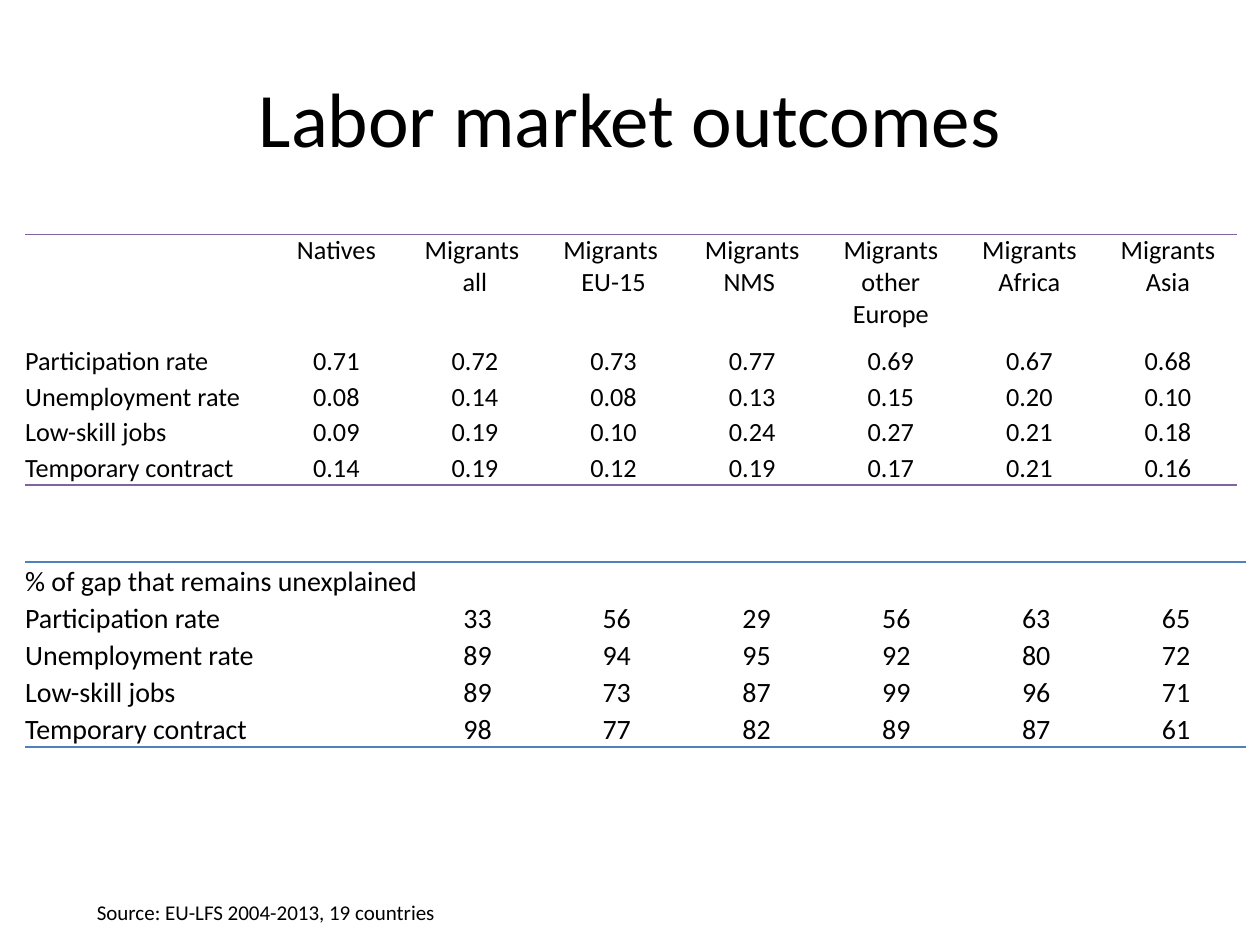
from dataclasses import dataclass

from lxml.etree import SubElement
from pptx import Presentation
from pptx.dml.color import RGBColor
from pptx.enum.text import MSO_ANCHOR as Anchor, PP_ALIGN as Align
from pptx.oxml import parse_xml
from pptx.oxml.ns import nsdecls, qn
from pptx.util import Inches, Pt

FONT = "Calibri"
COLORS = {"text": "000000", "purple": "8064A2", "blue": "4F81BD"}
NO_STYLE_NO_GRID = "{2D5ABB26-0587-4C30-8999-92F81FD0307C}"


@dataclass
class TextBox:
    text: str
    box: tuple[float, float, float, float]
    size: float
    align: Align = Align.LEFT
    anchor: Anchor = Anchor.TOP
    space_before: float = 0


@dataclass
class DataTable:
    top: float
    columns: list[float]
    rows: list[float]
    size: float
    rule_color: str
    cells: list[list[str]]
    top_anchored_header: bool = False
    heading_span: int = 1


TITLE = TextBox("Labor market outcomes", (0.5, 0.3, 9, 1.25), 44,
                Align.CENTER, Anchor.MIDDLE)
SOURCE = TextBox("Source: EU-LFS 2004-2013, 19 countries",
                 (0.67, 7.09, 6.93, 0.82), 12, space_before=2.4)

OUTCOMES = DataTable(
    top=1.86,
    columns=[1.92] + [1.1] * 7,
    rows=[0.85] + [1.14 / 4] * 4,
    size=15,
    rule_color="purple",
    top_anchored_header=True,
    cells=[
        ["", "Natives", "Migrants \vall", "Migrants \vEU-15", "Migrants NMS ",
         "Migrants other Europe", "Migrants Africa", "Migrants Asia"],
        ["Participation rate", "0.71", "0.72", "0.73", "0.77", "0.69", "0.67", "0.68"],
        ["Unemployment rate", "0.08", "0.14", "0.08", "0.13", "0.15", "0.20", "0.10"],
        ["Low-skill jobs", "0.09", "0.19", "0.10", "0.24", "0.27", "0.21", "0.18"],
        ["Temporary contract", "0.14", "0.19", "0.12", "0.19", "0.17", "0.21", "0.16"],
    ],
)
UNEXPLAINED_GAP = DataTable(
    top=4.46,
    columns=[2.25, 0.79, 1.1] + [1.11] * 5,
    rows=[1.47 / 5] * 5,
    size=16,
    rule_color="blue",
    heading_span=3,
    cells=[
        ["% of gap that remains unexplained"] + [""] * 7,
        ["Participation rate", "", "33", "56", "29", "56", "63", "65"],
        ["Unemployment rate", "", "89", "94", "95", "92", "80", "72"],
        ["Low-skill jobs", "", "89", "73", "87", "99", "96", "71"],
        ["Temporary contract", "", "98", "77", "82", "89", "87", "61"],
    ],
)


def format_paragraph(p, size: float, align: Align) -> None:
    p.alignment = align
    for r in p.runs:
        r.font.name = FONT
        r.font.size = Pt(size)
        r.font.color.rgb = RGBColor.from_string(COLORS["text"])


def add_text(slide, item: TextBox) -> None:
    sp = slide.shapes.add_textbox(*map(Inches, item.box))
    tf = sp.text_frame
    tf.word_wrap = True
    tf.vertical_anchor = item.anchor
    tf.text = item.text
    p = tf.paragraphs[0]
    p.space_before = Pt(item.space_before)
    format_paragraph(p, item.size, item.align)


def add_rule(cell, side: str, color: str) -> None:
    """Draw a 1 pt border on one side of the cell: lnT or lnB."""
    line = parse_xml(
        f'<a:{side} {nsdecls("a")} w="{Pt(1)}"><a:solidFill>'
        f'<a:srgbClr val="{color}"/></a:solidFill></a:{side}>')
    cell._tc.get_or_add_tcPr().insert(0, line)


def fill_cell(cell, text: str, size: float, align: Align, anchor: Anchor) -> None:
    cell.margin_left = cell.margin_right = cell.margin_top = cell.margin_bottom = 0
    cell.vertical_anchor = anchor
    cell.fill.background()
    p = cell.text_frame.paragraphs[0]
    p.text = text
    format_paragraph(p, size, align)
    if not text:  # keeps an empty cell from stretching its row
        SubElement(p._p, qn("a:endParaRPr")).set("sz", str(int(size * 100)))


def add_data_table(slide, data: DataTable) -> None:
    frame = slide.shapes.add_table(
        len(data.rows), len(data.columns), Inches(0.2), Inches(data.top),
        Inches(sum(data.columns)), Inches(sum(data.rows)))
    table = frame.table
    table.first_row = table.horz_banding = False
    table._tbl.tblPr.find(qn("a:tableStyleId")).text = NO_STYLE_NO_GRID
    for column, width in zip(table.columns, data.columns):
        column.width = Inches(width)
    for row, height in zip(table.rows, data.rows):
        row.height = Inches(height)

    last = len(data.rows) - 1
    color = COLORS[data.rule_color]
    for i, texts in enumerate(data.cells):
        is_top = i == 0 and data.top_anchored_header
        anchor = Anchor.TOP if is_top else Anchor.BOTTOM
        for j, text in enumerate(texts):
            cell = table.cell(i, j)
            align = Align.CENTER if j else Align.LEFT
            fill_cell(cell, text, data.size, align, anchor)
            if i in (0, last):
                add_rule(cell, "lnB" if i else "lnT", color)
    if data.heading_span > 1:
        table.cell(0, 0).merge(table.cell(0, data.heading_span - 1))


def main() -> None:
    prs = Presentation()
    prs.slide_width, prs.slide_height = Inches(10), Inches(7.5)
    slide = prs.slides.add_slide(prs.slide_layouts[6])
    add_text(slide, TITLE)
    add_data_table(slide, OUTCOMES)
    add_text(slide, SOURCE)
    add_data_table(slide, UNEXPLAINED_GAP)
    prs.save("out.pptx")


if __name__ == "__main__":
    main()
